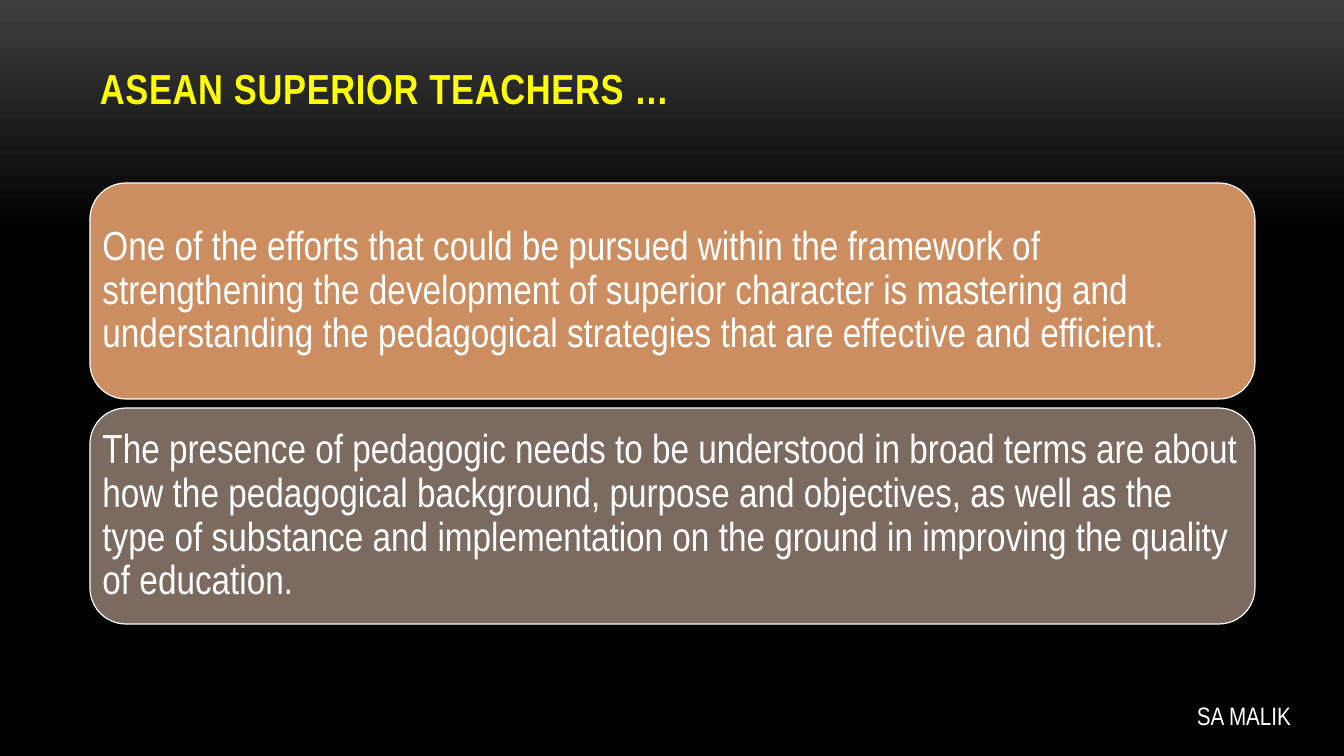
from dataclasses import dataclass

from pptx import Presentation
from pptx.dml.color import RGBColor
from pptx.enum.shapes import MSO_SHAPE
from pptx.enum.text import MSO_ANCHOR, PP_ALIGN
from pptx.shapes.autoshape import Shape
from pptx.slide import Slide
from pptx.util import Emu, Pt

EMU_PER_PX = 914400 / 100.8
FONT_NAME = "Arial Narrow"

BLACK = RGBColor(0x00, 0x00, 0x00)
CHARCOAL = RGBColor(0x3F, 0x3F, 0x3F)
WHITE = RGBColor(0xFF, 0xFF, 0xFF)
YELLOW = RGBColor(0xFF, 0xFF, 0x00)
COPPER = RGBColor(0xCC, 0x8E, 0x60)
TAUPE = RGBColor(0x7A, 0x6A, 0x60)

CARD_LEFT, CARD_TOP = 90, 183
CARD_WIDTH, CARD_HEIGHT = 1165, 216
CARD_GAP = 9
CARD_INSET = 2


@dataclass(frozen=True)
class Card:
    text: str
    fill: RGBColor


CARDS = [
    Card(
        "One of the efforts that could be pursued within the framework of "
        "strengthening the development of superior character is mastering and "
        "understanding the pedagogical strategies that are effective and efficient.",
        COPPER,
    ),
    Card(
        "The presence of pedagogic needs to be understood in broad terms are about "
        "how the pedagogical background, purpose and objectives, as well as the "
        "type of substance and implementation on the ground in improving the quality "
        "of education.",
        TAUPE,
    ),
]


def px(length: int) -> Emu:
    return Emu(round(length * EMU_PER_PX))


def write_text(
    shape: Shape,
    text: str,
    *,
    size: int,
    color: RGBColor = WHITE,
    bold: bool = False,
    anchor: MSO_ANCHOR = MSO_ANCHOR.TOP,
    wrap: bool = True,
    line_spacing: float = 1.0,
    letter_spacing: float = 0,
) -> None:
    """Fill the shape with one left-aligned paragraph; letter_spacing is in points."""
    frame = shape.text_frame
    frame.word_wrap = wrap
    frame.vertical_anchor = anchor
    paragraph = frame.paragraphs[0]
    paragraph.alignment = PP_ALIGN.LEFT
    paragraph.line_spacing = line_spacing
    run = paragraph.add_run()
    run.text = text
    run.font.name = FONT_NAME
    run.font.size = Pt(size)
    run.font.bold = bold
    run.font.color.rgb = color
    if letter_spacing:
        run._r.get_or_add_rPr().set("spc", str(round(letter_spacing * 100)))


def paint_background(slide: Slide) -> None:
    """Fade from charcoal at the top edge to black at 31 % of the height."""
    fill = slide.background.fill
    fill.gradient()
    fill.gradient_angle = 270
    for stop, position, color in zip(fill.gradient_stops, (0, 0.31), (CHARCOAL, BLACK)):
        stop.position = position
        stop.color.rgb = color


def add_text_box(slide: Slide, left: int, top: int, width: int, height: int) -> Shape:
    return slide.shapes.add_textbox(px(left), px(top), px(width), px(height))


def add_card(slide: Slide, card: Card, top: int) -> None:
    shape = slide.shapes.add_shape(
        MSO_SHAPE.ROUNDED_RECTANGLE,
        px(CARD_LEFT), px(top), px(CARD_WIDTH), px(CARD_HEIGHT),
    )
    shape.shadow.inherit = False
    shape.fill.solid()
    shape.fill.fore_color.rgb = card.fill
    shape.line.color.rgb = WHITE
    shape.line.width = Pt(0.85)
    frame = shape.text_frame
    frame.margin_left = frame.margin_right = px(CARD_INSET)
    frame.margin_top = frame.margin_bottom = px(CARD_INSET)
    write_text(shape, card.text, size=29, anchor=MSO_ANCHOR.MIDDLE, line_spacing=0.9)


def main() -> None:
    presentation = Presentation()
    presentation.slide_width = px(1344)
    presentation.slide_height = px(756)
    slide = presentation.slides.add_slide(presentation.slide_layouts[6])
    paint_background(slide)

    title = add_text_box(slide, CARD_LEFT, 30, CARD_WIDTH, 88)
    write_text(
        title, "ASEAN SUPERIOR TEACHERS …",
        size=30, color=YELLOW, bold=True, anchor=MSO_ANCHOR.BOTTOM, letter_spacing=0.5,
    )

    for index, card in enumerate(CARDS):
        add_card(slide, card, CARD_TOP + index * (CARD_HEIGHT + CARD_GAP))

    author = add_text_box(slide, 1187, 695, 127, 40)
    write_text(author, "SA MALIK", size=18, wrap=False)

    presentation.save("out.pptx")


if __name__ == "__main__":
    main()
